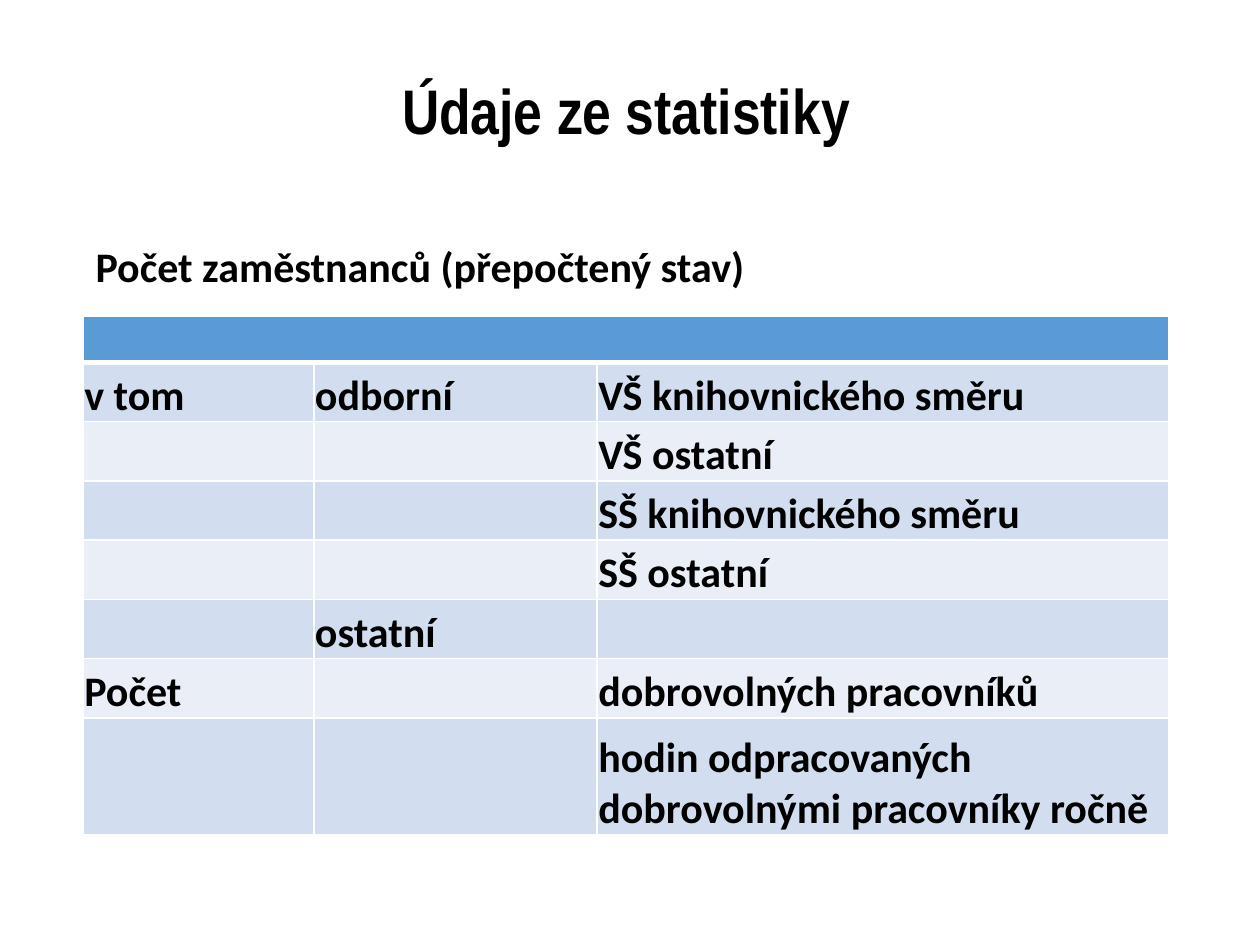
from lxml import etree
from pptx import Presentation
from pptx.dml.color import RGBColor
from pptx.enum import text
from pptx.oxml import ns
from pptx.util import Pt

HUES = {"ink": "000000", "head": "5B9BD5", "dark": "D2DEEF",
        "light": "EAEFF7", "line": "FFFFFF"}
LEFT, WIDE = 47.5, 620.6
COLS = [131.8, 161.9, 326.9]
TALL = [26, *[33.9] * 6, 67]
ROWS = [
    ("", "", ""),
    ("v tom", "odborní", "VŠ knihovnického směru"),
    ("", "", "VŠ ostatní"),
    ("", "", "SŠ knihovnického směru"),
    ("", "", "SŠ ostatní"),
    ("", "ostatní", ""),
    ("Počet", "", "dobrovolných pracovníků"),
    ("", "", "hodin odpracovaných dobrovolnými pracovníky ročně"),
]


def hue(name):
    """Return the named colour."""
    return RGBColor.from_string(HUES[name])


def write(para, words, size=24, face="Calibri"):
    """Add one bold run to a paragraph."""
    run = para.add_run()
    run.text = words
    font = run.font
    font.name, font.size, font.bold = face, Pt(size), True
    font.color.rgb = hue("ink")


def place(shape, left, top, wide, tall):
    """Set the position and size of a shape."""
    shape.left, shape.top = Pt(left), Pt(top)
    shape.width, shape.height = Pt(wide), Pt(tall)


def add_title(slide, words):
    """Place and fill the title."""
    shape = slide.shapes.title
    place(shape, LEFT, 28.3, WIDE, 73.4)
    frame = shape.text_frame
    frame.vertical_anchor = text.MSO_ANCHOR.MIDDLE
    para = frame.paragraphs[0]
    para.alignment = text.PP_ALIGN.CENTER
    para.line_spacing = 0.9
    write(para, words, 36, "Arial Narrow")


def add_label(slide, words):
    """Add the line above the table."""
    box = slide.shapes.add_textbox(Pt(LEFT), Pt(134), Pt(394.6), Pt(36))
    box.text_frame.word_wrap = False
    write(box.text_frame.paragraphs[0], words)


def rule(cell, row):
    """Draw white borders, thick below the header row."""
    for side in "LRTB":
        thick = (row, side) in ((0, "B"), (1, "T"))
        line = etree.SubElement(cell._tc.get_or_add_tcPr(),
                                ns.qn(f"a:ln{side}"),
                                w=str(Pt(3 if thick else 1)))
        fill = etree.SubElement(line, ns.qn("a:solidFill"))
        etree.SubElement(fill, ns.qn("a:srgbClr"), val=HUES["line"])


def fill_cell(cell, row, words):
    """Format one cell and write its words."""
    rule(cell, row)
    cell.fill.solid()
    shade = "head" if row == 0 else "dark" if row % 2 else "light"
    cell.fill.fore_color.rgb = hue(shade)
    cell.margin_left = cell.margin_right = cell.margin_top = Pt(0.7)
    cell.margin_bottom = 0
    cell.vertical_anchor = text.MSO_ANCHOR.BOTTOM
    if words:
        write(cell.text_frame.paragraphs[0], words)


def add_grid(slide):
    """Add the staff table with its merged header."""
    frame = slide.shapes.add_table(len(ROWS), len(COLS), Pt(LEFT), Pt(181),
                                   Pt(sum(COLS)), Pt(sum(TALL)))
    grid = frame.table
    for col, wide in zip(grid.columns, COLS):
        col.width = Pt(wide)
    for row, tall in zip(grid.rows, TALL):
        row.height = Pt(tall)
    for r, line in enumerate(ROWS):
        for c, words in enumerate(line):
            fill_cell(grid.cell(r, c), r, words)
    grid.cell(0, 0).merge(grid.cell(0, len(COLS) - 1))


def main():
    """Build and save the slide."""
    deck = Presentation()
    deck.slide_width, deck.slide_height = Pt(720), Pt(540)
    slide = deck.slides.add_slide(deck.slide_layouts[5])
    add_title(slide, "Údaje ze statistiky")
    add_grid(slide)
    add_label(slide, "Počet zaměstnanců (přepočtený stav)")
    deck.save("out.pptx")


if __name__ == "__main__":
    main()
